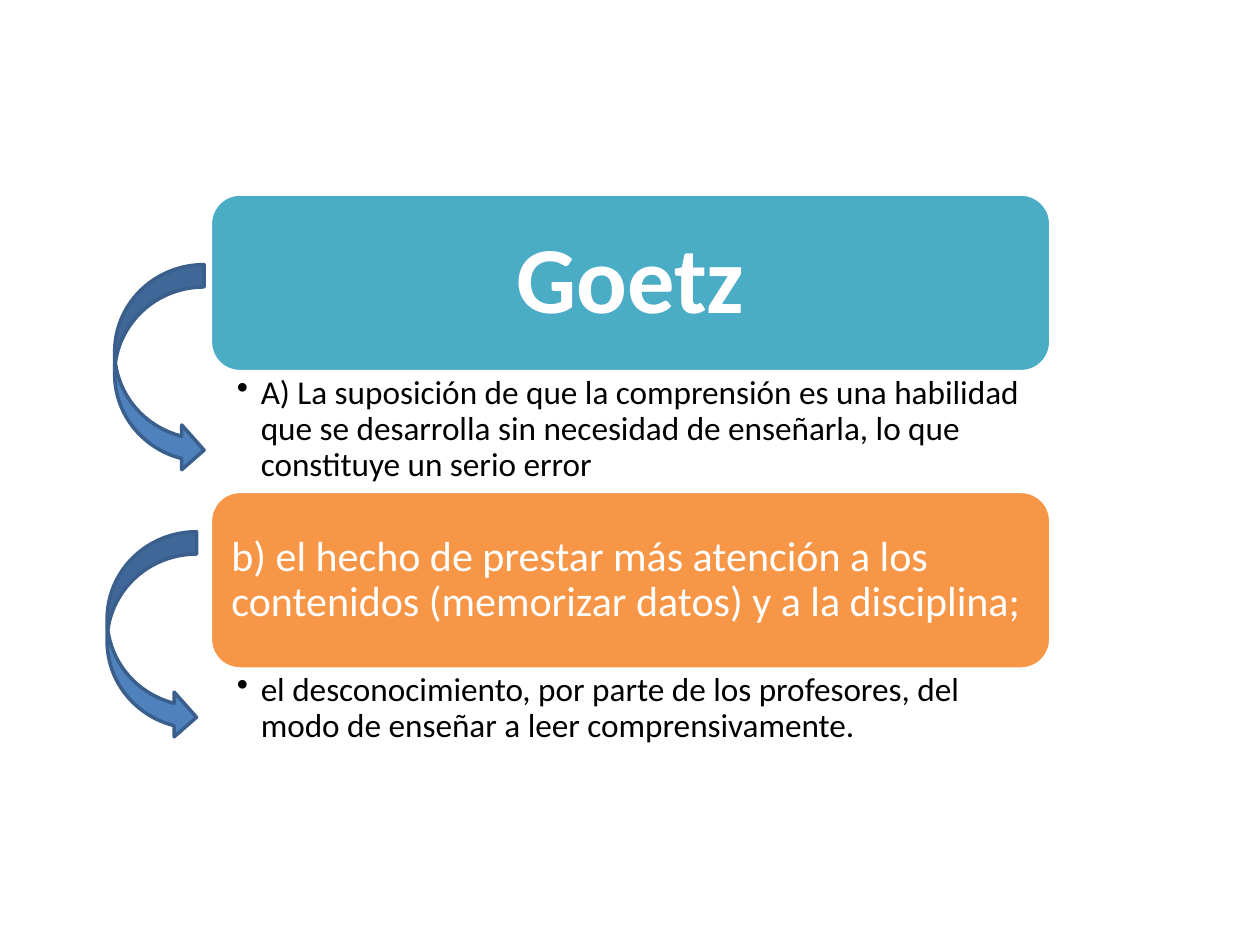
from dataclasses import dataclass

from lxml import etree
from pptx import Presentation
from pptx.dml.color import RGBColor
from pptx.enum import shapes, text
from pptx.oxml.ns import qn
from pptx.util import Inches, Pt

LEFT, WIDTH = 1.67, 6.67
CARD_HEIGHT = 1.41


@dataclass
class Card:
    top: float
    fill: str
    title: str
    size: int
    bold: bool
    align: text.PP_ALIGN
    inset: float
    bullet: str
    bullet_height: float


@dataclass
class Arrow:
    left: float
    top: float


CARDS = [
    Card(1.54, "4BACC6", "Goetz", 54, True, text.PP_ALIGN.CENTER, 0.23,
         "A) La suposición de que la comprensión es una habilidad que se desarrolla "
         "sin necesidad de enseñarla, lo que constituye un serio error", 0.95),
    Card(3.9, "F79646",
         "b) el hecho de prestar más atención a los contenidos (memorizar datos) "
         "y a la disciplina;", 24, False, text.PP_ALIGN.LEFT, 0.1,
         "el desconocimiento, por parte de los profesores, del modo de enseñar "
         "a leer comprensivamente.", 0.65),
]
ARROWS = [Arrow(0.91, 2.1), Arrow(0.85, 4.22)]


def color(value: str) -> RGBColor:
    return RGBColor.from_string(value)


def add_filled_shape(slide, kind, left: float, top: float, width: float,
                     height: float, fill: str, line: str):
    shape = slide.shapes.add_shape(
        kind, Inches(left), Inches(top), Inches(width), Inches(height))
    shape.shadow.inherit = False
    shape.fill.solid()
    shape.fill.fore_color.rgb = color(fill)
    shape.line.color.rgb = color(line)
    shape.line.width = Pt(2)
    return shape


def write_text(shape, content: str, size: int, font_color: str, bold: bool,
               align: text.PP_ALIGN, anchor: text.MSO_ANCHOR,
               insets: tuple[float, float, float, float]):
    frame = shape.text_frame
    frame.word_wrap = True
    frame.vertical_anchor = anchor
    (frame.margin_left, frame.margin_top,
     frame.margin_right, frame.margin_bottom) = map(Inches, insets)
    paragraph = frame.paragraphs[0]
    paragraph.alignment = align
    paragraph.line_spacing = 0.9
    run = paragraph.add_run()
    run.text = content
    run.font.name = "Calibri"
    run.font.size = Pt(size)
    run.font.bold = bold
    run.font.color.rgb = color(font_color)
    return paragraph


def add_bullet(paragraph, indent: float) -> None:
    paragraph.level = 1
    properties = paragraph._p.get_or_add_pPr()
    properties.set("marL", str(Inches(indent)))
    properties.set("indent", str(-Inches(indent)))
    etree.SubElement(properties, qn("a:buChar")).set("char", "•")


def add_card(slide, card: Card) -> None:
    shape = add_filled_shape(
        slide, shapes.MSO_SHAPE.ROUNDED_RECTANGLE, LEFT, card.top, WIDTH,
        CARD_HEIGHT, card.fill, "FFFFFF")
    write_text(shape, card.title, card.size, "FFFFFF", card.bold, card.align,
               text.MSO_ANCHOR.MIDDLE, (card.inset,) * 4)
    box = slide.shapes.add_textbox(
        Inches(LEFT), Inches(card.top + CARD_HEIGHT), Inches(WIDTH),
        Inches(card.bullet_height))
    paragraph = write_text(box, card.bullet, 19, "000000", False,
                           text.PP_ALIGN.LEFT, text.MSO_ANCHOR.TOP,
                           (0.21, 0.03, 0.19, 0.03))
    add_bullet(paragraph, 0.19)


def add_arrow(slide, arrow: Arrow) -> None:
    add_filled_shape(slide, shapes.MSO_SHAPE.CURVED_RIGHT_ARROW, arrow.left,
                     arrow.top, 0.71, 1.65, "4F81BD", "3A5F8C")


def main() -> None:
    presentation = Presentation()
    presentation.slide_width = Inches(10)
    presentation.slide_height = Inches(7.5)
    slide = presentation.slides.add_slide(presentation.slide_layouts[6])
    for card in CARDS:
        add_card(slide, card)
    for arrow in ARROWS:
        add_arrow(slide, arrow)
    presentation.save("out.pptx")


if __name__ == "__main__":
    main()
